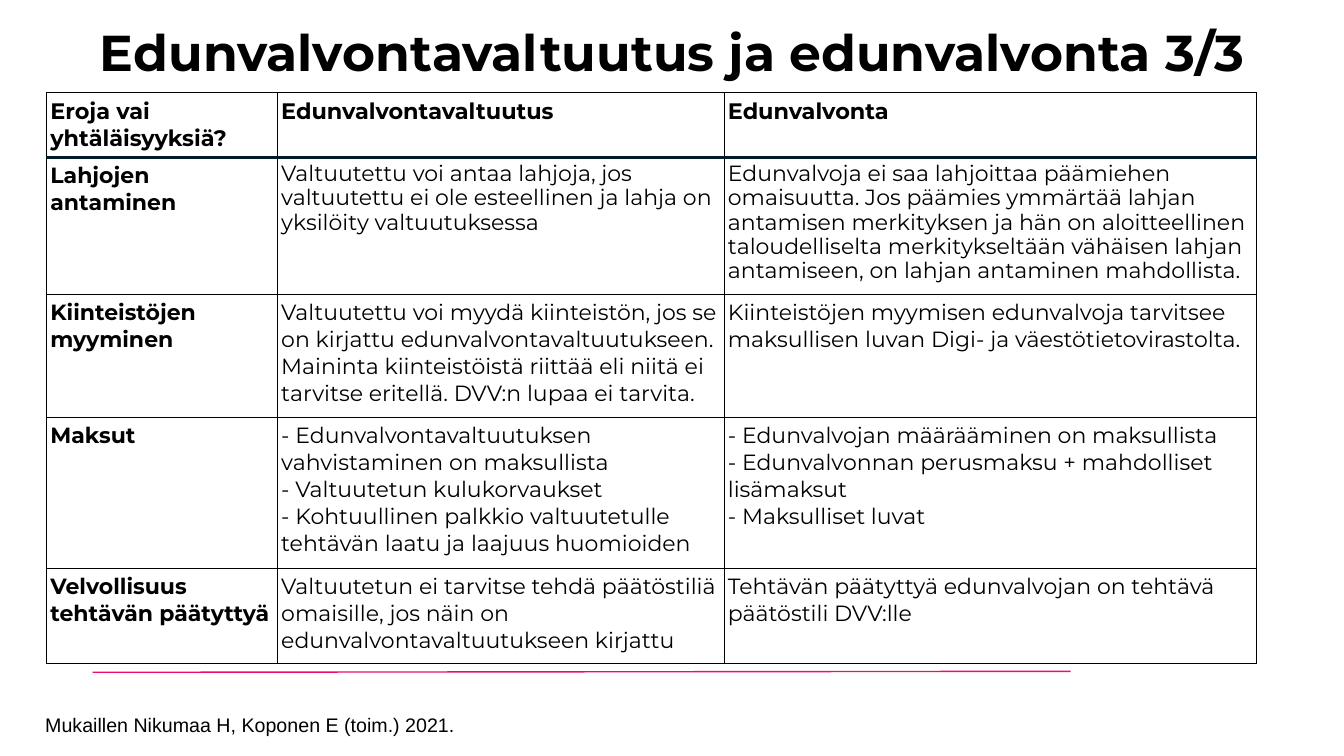
from lxml import etree
from pptx import Presentation
from pptx.dml.color import RGBColor
from pptx.enum import shapes, text
from pptx.oxml import ns
from pptx.util import Pt

PX = 9144
COLORS = {"ink": "000000", "header_rule": "001B2A", "accent": "ED0B6F"}
COLUMN_WIDTHS = [229, 443, 528]
ROW_HEIGHTS = [64, 136, 122, 150, 94]
COMPARISON = [
    ["Eroja vai yhtäläisyyksiä?", "Edunvalvontavaltuutus", "Edunvalvonta"],
    [
        "Lahjojen antaminen",
        "Valtuutettu voi antaa lahjoja, jos valtuutettu ei ole esteellinen "
        "ja lahja on yksilöity valtuutuksessa",
        "Edunvalvoja ei saa lahjoittaa päämiehen omaisuutta. Jos päämies "
        "ymmärtää lahjan antamisen merkityksen ja hän on aloitteellinen "
        "taloudelliselta merkitykseltään vähäisen lahjan antamiseen, "
        "on lahjan antaminen mahdollista.",
    ],
    [
        "Kiinteistöjen myyminen",
        "Valtuutettu voi myydä kiinteistön, jos se on kirjattu "
        "edunvalvontavaltuutukseen. Maininta kiinteistöistä riittää eli "
        "niitä ei tarvitse eritellä. DVV:n lupaa ei tarvita.",
        "Kiinteistöjen myymisen edunvalvoja tarvitsee maksullisen luvan "
        "Digi- ja väestötietovirastolta.",
    ],
    [
        "Maksut",
        "- Edunvalvontavaltuutuksen vahvistaminen on maksullista\n"
        "- Valtuutetun kulukorvaukset\n"
        "- Kohtuullinen palkkio valtuutetulle tehtävän laatu ja laajuus huomioiden",
        "- Edunvalvojan määrääminen on maksullista\n"
        "- Edunvalvonnan perusmaksu + mahdolliset lisämaksut\n"
        "- Maksulliset luvat",
    ],
    [
        "Velvollisuus tehtävän päätyttyä",
        "Valtuutetun ei tarvitse tehdä päätöstiliä omaisille, jos näin on "
        "edunvalvontavaltuutukseen kirjattu",
        "Tehtävän päätyttyä edunvalvojan on tehtävä päätöstili DVV:lle",
    ],
]


def px(*lengths):
    return [length * PX for length in lengths]


def write(frame, wording, size=16, font="Montserrat", bold=False,
          align=text.PP_ALIGN.LEFT, spacing=None):
    frame.word_wrap = True
    for index, line in enumerate(wording.split("\n")):
        paragraph = frame.add_paragraph() if index else frame.paragraphs[0]
        paragraph.alignment = align
        paragraph.line_spacing = spacing
        run = paragraph.add_run()
        run.text = line
        run.font.size = Pt(size)
        run.font.name = font
        run.font.bold = bold
        run.font.color.rgb = RGBColor.from_string(COLORS["ink"])


def add_label(slide, wording, box, insets, anchor=text.MSO_ANCHOR.TOP, **style):
    frame = slide.shapes.add_textbox(*px(*box)).text_frame
    frame.margin_left, frame.margin_top, frame.margin_right, frame.margin_bottom = px(*insets)
    frame.vertical_anchor = anchor
    write(frame, wording, **style)


def add_border(cell, side, color, width):
    properties = cell._tc.get_or_add_tcPr()
    border = etree.SubElement(properties, ns.qn(f"a:ln{side}"), w=str(int(Pt(width))))
    fill = etree.SubElement(border, ns.qn("a:solidFill"))
    etree.SubElement(fill, ns.qn("a:srgbClr"), val=COLORS[color])


def style_cell(cell, row):
    cell.margin_left, cell.margin_top, cell.margin_right, cell.margin_bottom = px(4, 5, 4, 5)
    for side in "LRTB":
        under_header = (row, side) in [(0, "B"), (1, "T")]
        add_border(cell, side, *(("header_rule", 2.25) if under_header else ("ink", 0.57)))
    cell.fill.background()


def add_comparison(slide, left, top):
    box = px(left, top, sum(COLUMN_WIDTHS), sum(ROW_HEIGHTS))
    table = slide.shapes.add_table(len(ROW_HEIGHTS), len(COLUMN_WIDTHS), *box).table
    table.first_row = True
    table.horz_banding = False
    for column, width in zip(table.columns, px(*COLUMN_WIDTHS)):
        column.width = width
    for row, height in zip(table.rows, px(*ROW_HEIGHTS)):
        row.height = height
    for row, topic in enumerate(COMPARISON):
        for column, wording in enumerate(topic):
            cell = table.cell(row, column)
            style_cell(cell, row)
            heading = row == 0 or column == 0
            write(cell.text_frame, wording, size=16 if row == 0 else 15.7, bold=heading,
                  spacing=0.9 if row == 1 and not heading else None)


def add_rule(slide, start, end):
    rule = slide.shapes.add_connector(shapes.MSO_CONNECTOR.STRAIGHT, *px(*start, *end))
    rule.line.color.rgb = RGBColor.from_string(COLORS["accent"])
    rule.line.width = Pt(1)
    etree.SubElement(rule._element.spPr, ns.qn("a:effectLst"))


def main():
    deck = Presentation()
    deck.slide_width, deck.slide_height = px(1333, 750)
    slide = deck.slides.add_slide(deck.slide_layouts[6])
    add_rule(slide, (1062, 666), (92, 667))
    add_label(slide, "Edunvalvontavaltuutus ja edunvalvonta 3/3", (67, -12, 1200, 125),
              (0, 0, 0, 0), anchor=text.MSO_ANCHOR.MIDDLE, size=36, bold=True,
              align=text.PP_ALIGN.CENTER)
    add_comparison(slide, 46, 92)
    add_label(slide, "Mukaillen Nikumaa H, Koponen E (toim.) 2021.", (35, 702, 440, 32),
              (10, 5, 10, 5), size=14, font="Arial")
    deck.save("out.pptx")


if __name__ == "__main__":
    main()
